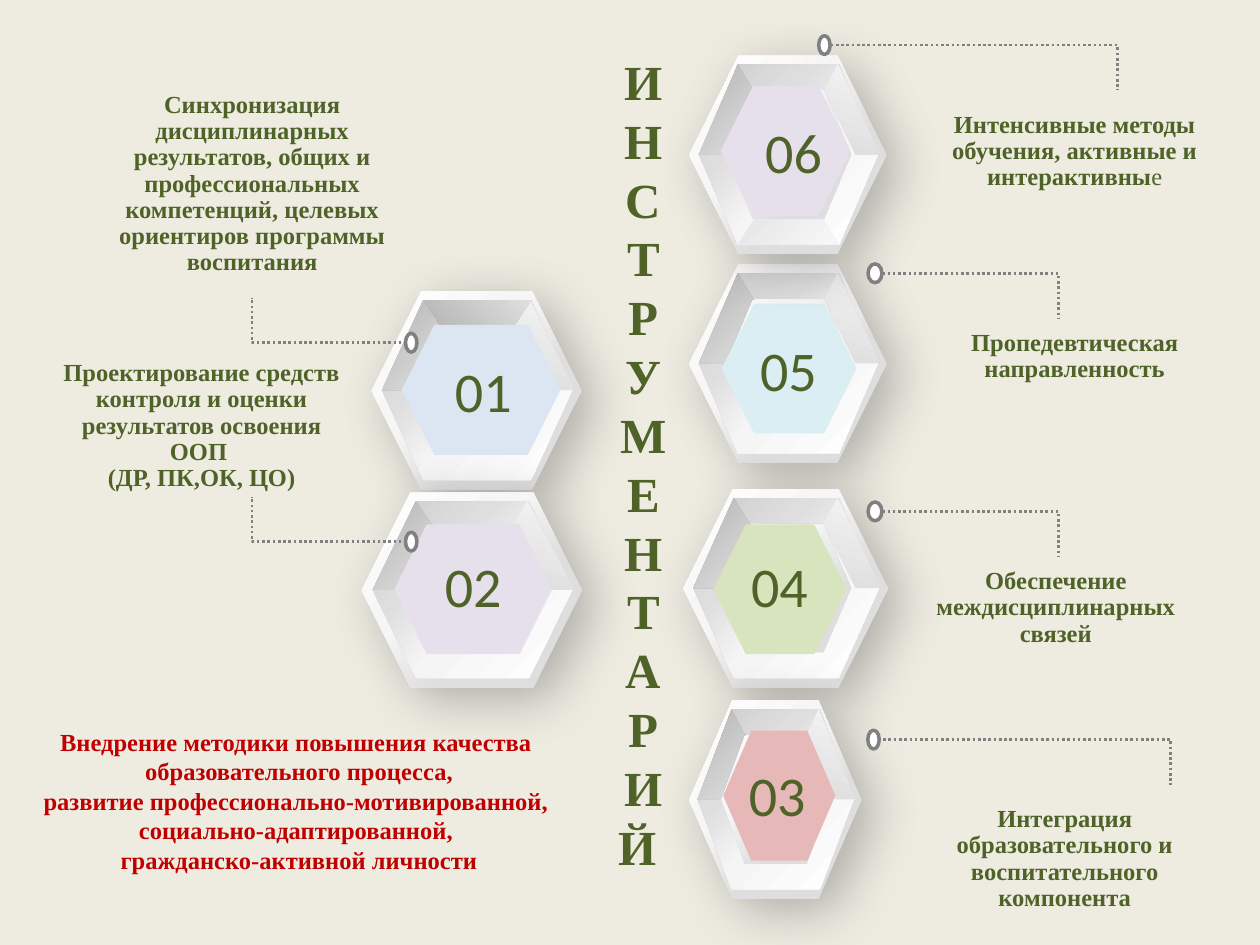
from dataclasses import dataclass

from pptx import Presentation
from pptx import util as u
from pptx.dml.color import RGBColor
from pptx.enum import dml, shapes, text
from pptx.oxml import parse_xml
from pptx.oxml.ns import nsdecls, qn

Cm = u.Cm
SERIF, SANS = "Times New Roman", "Calibri"
COLORS = {
    "background": "EEECE1", "green": "4F6228", "red": "C00000", "leader": "808080",
    "white": "FFFFFF", "shadow": "696969", "blue": "DCE6F2", "lilac": "E6E0EC",
    "aqua": "DBEEF4", "lime": "D7E4BD", "rose": "E6B9B8",
}
# Gradient stops (percent, colour) and clockwise angle
BODY = ([(17, "DEDEDE"), (37, "E0E0E0"), (61, "F6F6F6"), (100, "FFFFFF")], 225)
RIM = ([(0, "CBCBCB"), (32, "DEDEDE"), (57, "F5F5F5"), (100, "FFFFFF")], 45)
DARK = ([(0, "B4B4B4"), (100, "DFDFDF")], 45)
LIGHT = ([(0, "E6E6E6"), (100, "F7F7F7")], 45)
RIGHT_SIDE = ([(0, "DEDEDE"), (100, "F4F4F4")], 288)

# Outlines as fractions of the rim's width and height
RIM_OUTER = [(.217, 0), (.783, 0), (1, .5), (.783, 1), (.217, 1), (0, .5)]
RIM_INNER = [(.298, .14), (.146, .5), (.298, .86), (.702, .86), (.854, .5), (.702, .14)]
LEFT_FACET = [(.217, 0), (.305, .145), (.298, .145), (.146, .5), (0, .5)]
RIGHT_FACET = [(.775, 0), (.7, .14), (.874, .5), (1.01, .5)]

CORE_HEIGHT, LABEL_HEIGHT, DOT_HEIGHT, CAPTION_WIDTH = 2.62, 1.63, 0.38, 6.35


@dataclass
class Cell:
    number: str
    color: str
    frame: tuple  # left, top, width, height
    core: tuple   # left, top, width
    label: tuple  # left, top, width
    front: str = ""  # bevel edge lying over the rim


@dataclass
class Leader:
    dot_x: float
    start_x: float
    end_x: float
    y: float
    drop: float = 0.91
    dot_width: float = 0.23


@dataclass
class Caption:
    left: float
    top: float
    height: float
    lines: list


CELLS = [
    Cell("01", "blue", (7.49, 5.87, 4.24, 4.01), (8.1, 6.55, 3.2), (8.31, 7.06, 2.87), "top"),
    Cell("02", "lilac", (7.29, 9.93, 4.45, 3.94), (7.95, 10.57, 3.18), (7.9, 11, 3.28)),
    Cell("05", "aqua", (13.89, 5.33, 3.99, 4.01), (14.55, 6.12, 2.72), (14.5, 6.63, 2.79)),
    Cell("04", "lime", (13.77, 9.86, 4.14, 4.01), (14.38, 10.57, 2.69), (14.33, 11, 2.77)),
    Cell("03", "rose", (13.89, 14.12, 3.48, 4.01), (14.58, 14.73, 2.26), (14.5, 15.21, 2.34)),
    Cell("06", "lilac", (13.89, 1.12, 3.99, 4.01), (14.53, 1.73, 2.62), (14.5, 2.24, 3), "bottom"),
]
LEADERS = [
    Leader(16.62, 16.64, 22.53, 0.91),
    Leader(17.64, 17.68, 21.34, 5.51, dot_width=0.28),
    Leader(17.64, 17.68, 21.34, 10.31, dot_width=0.28),
    Leader(17.61, 17.7, 23.6, 14.91),
    Leader(8.29, 8.2, 5.08, 10.92, drop=-0.91),
    Leader(8.29, 8.2, 5.08, 6.91, drop=-0.91),
]
CAPTIONS = [
    Caption(1.91, 1.73, 3.99, ["Синхронизация дисциплинарных результатов, общих и профессиональных "
                               "компетенций, целевых ориентиров программы воспитания"]),
    Caption(0.89, 7.14, 2.92, ["Проектирование средств контроля и оценки результатов освоения ООП ",
                               "(ДР, ПК,ОК, ЦО)"]),
    Caption(18.29, 16.13, 2.39, ["Интеграция образовательного и воспитательного компонента"]),
    Caption(18.11, 11.33, 1.85, ["Обеспечение междисциплинарных связей"]),
    Caption(18.49, 6.53, 1.32, ["Пропедевтическая направленность"]),
]
INTENSIVE = Caption(18.49, 2.13, 1.85, ["Интенсивные методы обучения, активные и интерактивны"])
GOAL = ["Внедрение методики повышения качества ", "образовательного процесса,",
        "развитие профессионально-мотивированной, ", "социально-адаптированной, ",
        "гражданско-активной личности"]


def rgb(name: str) -> RGBColor:
    return RGBColor.from_string(COLORS[name])


def clean(shape) -> None:
    """Drop the theme's shadow and outline."""
    shape.shadow.inherit = False
    shape.line.fill.background()


def fill_gradient(shape, gradient: tuple) -> None:
    stops, angle = gradient
    stops_xml = "".join(f'<a:gs pos="{pos * 1000}"><a:srgbClr val="{color}"/></a:gs>'
                        for pos, color in stops)
    clean(shape)
    shape.fill.background()
    props = shape._element.spPr
    props.replace(props.find(qn("a:noFill")), parse_xml(
        f'<a:gradFill {nsdecls("a")} rotWithShape="1"><a:gsLst>{stops_xml}</a:gsLst>'
        f'<a:lin ang="{angle * 60000}" scaled="0"/></a:gradFill>'))


def cast_shadow(shape) -> None:
    effects = shape._element.spPr.find(qn("a:effectLst"))
    effects.append(parse_xml(
        f'<a:outerShdw {nsdecls("a")} blurRad="{u.Pt(30)}" dist="{u.Pt(10)}" dir="{40 * 60000}" '
        f'algn="tl" rotWithShape="0"><a:srgbClr val="{COLORS["shadow"]}">'
        '<a:alpha val="47000"/></a:srgbClr></a:outerShdw>'))


def add_preset(parent, kind, box: tuple):
    return parent.shapes.add_shape(kind, *map(Cm, box))


def add_outline(parent, contours: list, close: bool = True):
    """Draw contours of points given in centimetres as one freeform."""
    points = [[(Cm(x), Cm(y)) for x, y in contour] for contour in contours]
    builder = parent.shapes.build_freeform(*points[0][0], scale=1.0)
    for index, (first, *rest) in enumerate(points):
        if index:
            builder.move_to(*first)
        builder.add_line_segments(rest, close=close)
    return builder.convert_to_shape()


def write(frame, lines: list, size: float, color: str = "green", font: str = SERIF,
          bold: bool = True, spacing=None, wrap: bool = True) -> None:
    frame.text = "\n".join(lines)
    frame.word_wrap = wrap
    frame.auto_size = text.MSO_AUTO_SIZE.SHAPE_TO_FIT_TEXT
    frame.vertical_anchor = text.MSO_ANCHOR.TOP
    for paragraph in frame.paragraphs:
        paragraph.alignment = text.PP_ALIGN.CENTER
        paragraph.line_spacing = spacing
        for run in paragraph.runs:
            run.font.size, run.font.name, run.font.bold = u.Pt(size), font, bold
            run.font.color.rgb = rgb(color)


def draw_cell(slide, cell: Cell) -> None:
    left, top, width, height = cell.frame
    rim_left, rim_top = left + 0.05 * width, top + 0.045 * height
    rim_width, rim_height = 0.905 * width, 0.905 * height
    bezel = slide.shapes.add_group_shape()

    def on_rim(fractions: list) -> list:
        return [(rim_left + x * rim_width, rim_top + y * rim_height) for x, y in fractions]

    def draw_edge(edge: str) -> None:
        at = 0 if edge == "top" else 0.86
        facet = add_preset(bezel, shapes.MSO_SHAPE.TRAPEZOID,
                           (rim_left + 0.217 * rim_width, rim_top + at * rim_height,
                            0.566 * rim_width, 0.14 * rim_height))
        facet.adjustments[0] = 0.66
        if edge == "top":
            facet._element.spPr.xfrm.set("flipV", "1")
        fill_gradient(facet, DARK if edge == "top" else LIGHT)

    for edge in ("bottom", "top"):
        if edge != cell.front:
            draw_edge(edge)
    body = add_preset(bezel, shapes.MSO_SHAPE.HEXAGON, cell.frame)
    fill_gradient(body, BODY)
    cast_shadow(body)
    for contours, gradient in (([RIM_INNER, RIM_OUTER], RIM), ([RIGHT_FACET], RIGHT_SIDE),
                               ([LEFT_FACET], DARK)):
        fill_gradient(add_outline(bezel, [on_rim(c) for c in contours]), gradient)
    if cell.front:
        draw_edge(cell.front)

    center = slide.shapes.add_group_shape()
    core = add_preset(center, shapes.MSO_SHAPE.HEXAGON, (*cell.core, CORE_HEIGHT))
    clean(core)
    core.fill.solid()
    core.fill.fore_color.rgb = rgb(cell.color)
    label = center.shapes.add_textbox(*map(Cm, (*cell.label, LABEL_HEIGHT)))
    write(label.text_frame, [cell.number], 32, font=SANS, bold=False)


def draw_leader(slide, leader: Leader) -> None:
    group = slide.shapes.add_group_shape()
    route = add_outline(group, [[(leader.start_x, leader.y), (leader.end_x, leader.y),
                                 (leader.end_x, leader.y + leader.drop)]], close=False)
    route.fill.background()
    dot = add_preset(group, shapes.MSO_SHAPE.OVAL,
                     (leader.dot_x - leader.dot_width / 2, leader.y - DOT_HEIGHT / 2,
                      leader.dot_width, DOT_HEIGHT))
    dot.fill.solid()
    dot.fill.fore_color.rgb = rgb("white")
    for part, weight in ((route, 1.5), (dot, 2)):
        part.shadow.inherit = False
        part.line.color.rgb = rgb("leader")
        part.line.width = u.Pt(weight)
    route.line.dash_style = dml.MSO_LINE.ROUND_DOT


def draw_caption(slide, caption: Caption):
    box = slide.shapes.add_textbox(Cm(caption.left), Cm(caption.top),
                                   Cm(CAPTION_WIDTH), Cm(caption.height))
    write(box.text_frame, caption.lines, 14, spacing=u.Pt(15))
    return box.text_frame


def main() -> None:
    deck = Presentation()
    deck.slide_width, deck.slide_height = Cm(25.4), Cm(19.05)
    slide = deck.slides.add_slide(deck.slide_layouts[5])
    slide.background.fill.solid()
    slide.background.fill.fore_color.rgb = rgb("background")

    title = slide.shapes.title
    title.left, title.top, title.width, title.height = map(Cm, (11.91, 0.91, 2.13, 17.02))
    write(title.text_frame, [*"ИНСТРУМЕНТАРИ", "Й "], 28)

    for cell in CELLS:
        draw_cell(slide, cell)
    for leader in LEADERS:
        draw_leader(slide, leader)
    for caption in CAPTIONS:
        draw_caption(slide, caption)
    ending = draw_caption(slide, INTENSIVE).paragraphs[0].add_run()
    ending.text = "е"
    ending.font.size, ending.font.name, ending.font.bold = u.Pt(14), SERIF, False
    ending.font.color.rgb = rgb("green")

    goal = slide.shapes.add_textbox(*map(Cm, (0.58, 14.53, 10.9, 3.25)))
    write(goal.text_frame, GOAL, 14, color="red", wrap=False)
    deck.save("out.pptx")


if __name__ == "__main__":
    main()
